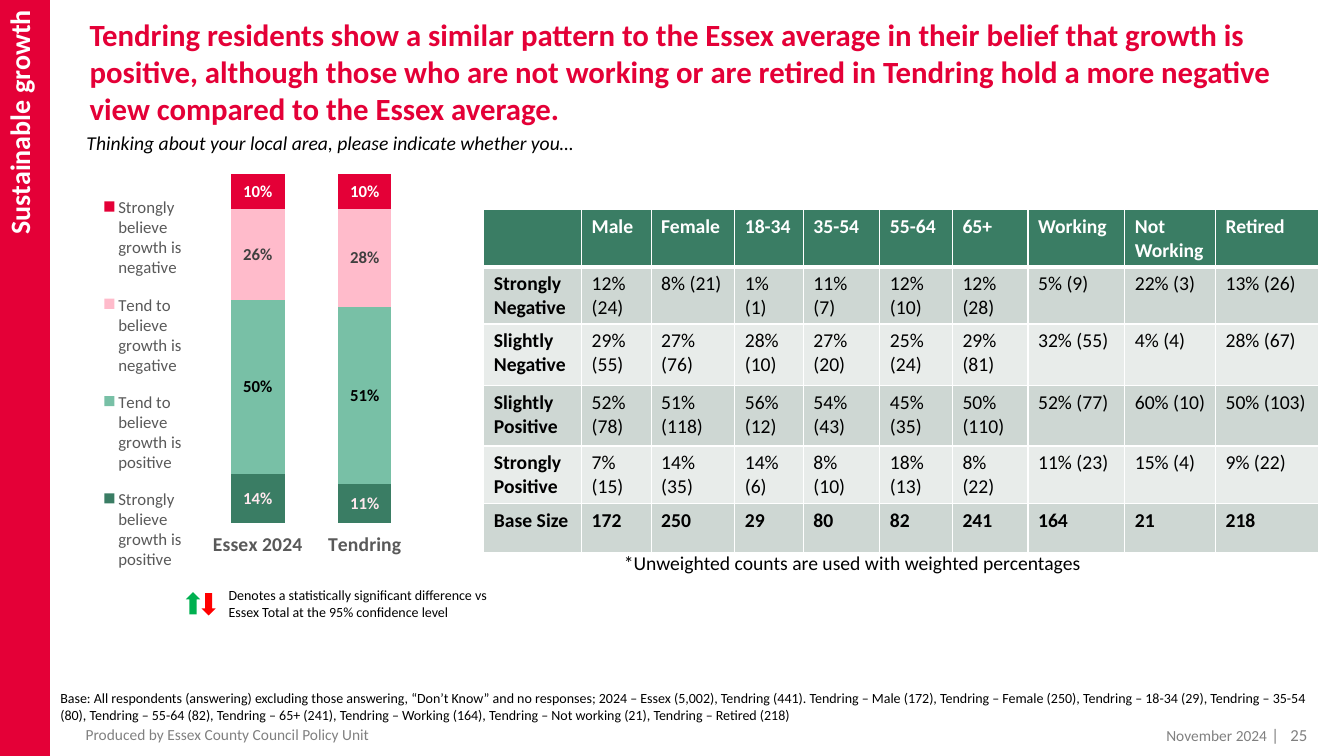
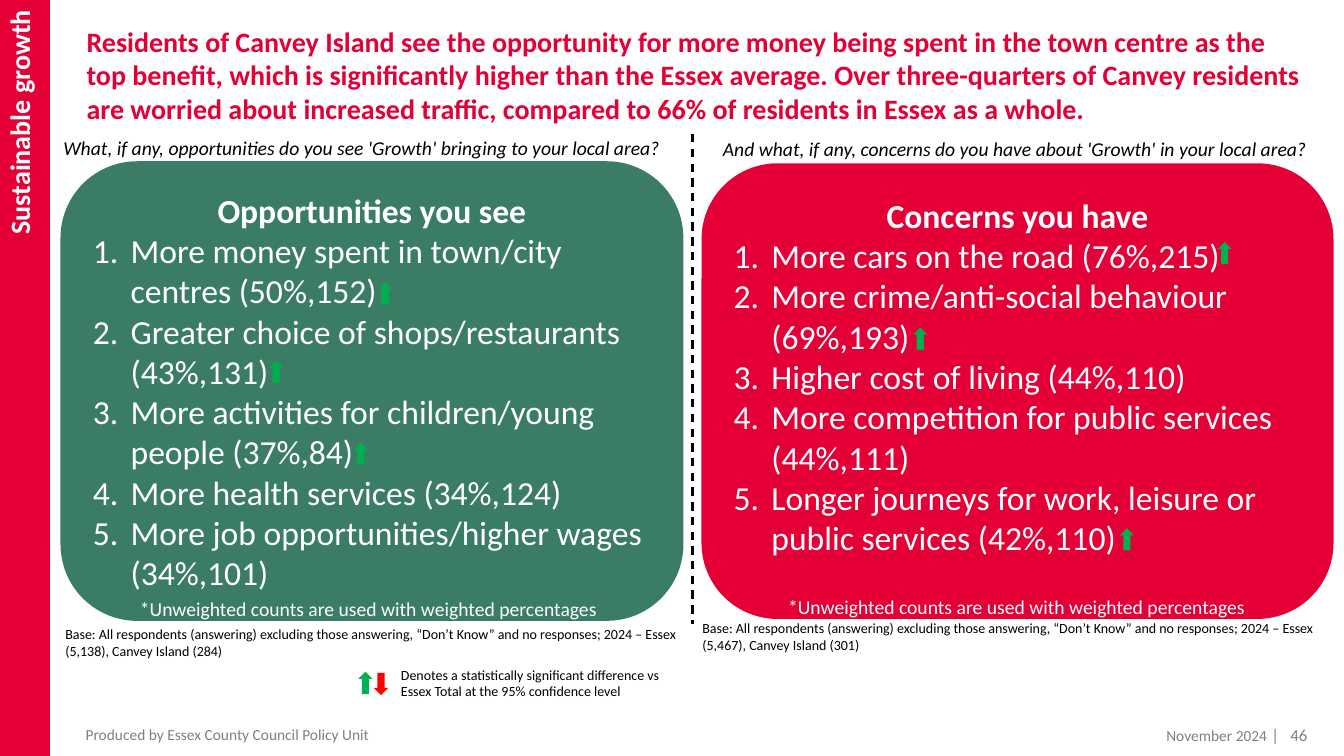
from dataclasses import dataclass

from lxml import etree
from pptx import Presentation, util as u
from pptx.chart.data import CategoryChartData
from pptx.dml.color import RGBColor
from pptx.enum import chart as ch, dml, shapes, text
from pptx.oxml.ns import qn

COLS, ROWS = 80, 45
CELL = u.Inches(7.5) / ROWS  # square grid cell
FONT = "Calibri"
HEX = dict(red="E40037", green="3A7D64", mint="78C0A6", pink="FFBBCB", blush="FFE8EE",
           white="FFFFFF", black="000000", grey="808080", slate="595959", charcoal="404040",
           sage="CED7D3", mist="E8ECEA", up="00B050", down="FF0000")
INSETS = (0.6, 0.3, 0.6, 0.3)  # left, top, right, bottom
TITLE_INSETS = (0.6, 0.3, 0.6, 0)
LEFT, CENTER, RIGHT = text.PP_ALIGN.LEFT, text.PP_ALIGN.CENTER, text.PP_ALIGN.RIGHT
TOP, MIDDLE = text.MSO_ANCHOR.TOP, text.MSO_ANCHOR.MIDDLE
COUNTS_NOTE = "*Unweighted counts are used with weighted percentages"
BASE = "Base: All respondents (answering) excluding those answering, “Don’t Know” and no responses; 2024 – "


@dataclass(frozen=True)
class Box:
    """A place on the grid, in columns and rows."""
    col: float
    row: float
    cols: float
    rows: float

    def emu(self) -> list[int]:
        return [g(v) for v in (self.col, self.row, self.cols, self.rows)]


@dataclass(frozen=True)
class Style:
    size: float
    color: str = "black"
    bold: bool = False
    italic: bool = False
    align: text.PP_ALIGN = LEFT


@dataclass(frozen=True)
class Series:
    name: str
    values: tuple[float, ...]
    color: str
    label: str


@dataclass(frozen=True)
class Panel:
    box: Box
    color: str
    heading: str
    items: tuple[str, ...]
    question: str
    question_at: tuple[float, float]
    base: str
    base_at: tuple[float, float]
    note_at: tuple[float, float]
    arrows: tuple[tuple[float, float], ...]
    bottom_inset: float = 0.3


QUESTION = Style(14, italic=True)
NOTE = Style(14)
SMALL = Style(10)
FOOTER = Style(11, "grey")
SERIES = (
    Series("Strongly believe growth is positive", (0.14, 0.11), "green", "blush"),
    Series("Tend to believe growth is positive", (0.50, 0.51), "mint", "black"),
    Series("Tend to believe growth is negative", (0.26, 0.28), "pink", "charcoal"),
    Series("Strongly believe growth is negative", (0.10, 0.10), "red", "white"),
)
TABLE = (
    ("", "Male", "Female", "18-34", "35-54", "55-64", "65+", "Working", "Not Working", "Retired"),
    ("Strongly Negative", "12% (24)", "8% (21)", "1% (1)", "11% (7)", "12% (10)", "12% (28)",
     "5% (9)", "22% (3)", "13% (26)"),
    ("Slightly Negative", "29% (55)", "27% (76)", "28% (10)", "27% (20)", "25% (24)", "29% (81)",
     "32% (55)", "4% (4)", "28% (67)"),
    ("Slightly Positive", "52% (78)", "51% (118)", "56% (12)", "54% (43)", "45% (35)", "50% (110)",
     "52% (77)", "60% (10)", "50% (103)"),
    ("Strongly Positive", "7% (15)", "14% (35)", "14% (6)", "8% (10)", "18% (13)", "8% (22)",
     "11% (23)", "15% (4)", "9% (22)"),
    ("Base Size", "172", "250", "29", "80", "82", "241", "164", "21", "218"),
)
TABLE_COLS = (5.82, 4.14, 4.98, 4.08, 4.56, 4.32, 4.5, 5.76, 5.4, 6.12)
TABLE_ROWS = (2.7, 3.3, 3.66, 3.6, 3.42, 2.94)
PANELS = (
    Panel(Box(41.76, 9.72, 37.62, 27.12), "red", "Concerns you have",
          ("More cars on the road (76%,215)", "More crime/anti-social behaviour (69%,193)",
           "Higher cost of living (44%,110)", "More competition for public services (44%,111)",
           "Longer journeys for work, leisure or public services (42%,110)"),
          "And what, if any, concerns do you have about 'Growth' in your local area?", (42.44, 7.86),
          "Essex (5,467), Canvey Island (301)", (41.22, 36.6), (46.32, 35.1),
          ((54.36, 19.5), (66.66, 31.44), (72.48, 14.4)), bottom_inset=2.1),
    Panel(Box(3.6, 9.6, 37.08, 27.36), "green", "Opportunities you see",
          ("More money spent in town/city centres (50%,152)",
           "Greater choice of shops/restaurants (43%,131)",
           "More activities for children/young people (37%,84)", "More health services (34%,124)",
           "More job opportunities/higher wages (34%,101)"),
          "What, if any, opportunities do you see 'Growth' bringing to your local area?", (3.18, 7.8),
          "Essex (5,138), Canvey Island (284)", (3.3, 36.96), (7.74, 35.22),
          ((22.5, 16.8), (16.02, 21.48), (21.06, 26.34))),
)


def g(cells: float) -> int:
    return round(cells * CELL)


def rgb(name: str) -> RGBColor:
    return RGBColor.from_string(HEX[name])


def set_font(font, st: Style) -> None:
    font.name, font.size = FONT, u.Pt(st.size)
    font.bold, font.italic = st.bold, st.italic
    font.color.rgb = rgb(st.color)


def write(p, words: str, st: Style) -> None:
    p.text, p.alignment = words, st.align
    set_font(p.font, st)


def set_frame(tf, insets=INSETS, anchor=TOP) -> None:
    tf.word_wrap, tf.vertical_anchor = True, anchor
    tf.margin_left, tf.margin_top, tf.margin_right, tf.margin_bottom = map(g, insets)


def add_text(s, box: Box, words: str, st: Style, insets=INSETS, anchor=TOP) -> None:
    tf = s.shapes.add_textbox(*box.emu()).text_frame
    set_frame(tf, insets, anchor)
    write(tf.paragraphs[0], words, st)


def add_filled(s, kind, box: Box, color: str):
    sp = s.shapes.add_shape(kind, *box.emu())
    sp.shadow.inherit = False
    sp.fill.solid()
    sp.fill.fore_color.rgb = rgb(color)
    sp.line.fill.background()
    return sp


def add_arrow(s, col: float, row: float, up: bool = True) -> None:
    kind = shapes.MSO_SHAPE.UP_ARROW if up else shapes.MSO_SHAPE.DOWN_ARROW
    add_filled(s, kind, Box(col, row, 0.84, 1.32), "up" if up else "down")


def add_key(s, col: float, row: float) -> None:
    """Explains the significance arrows."""
    add_text(s, Box(col, row, 18.24, 2.64),
             "Denotes a statistically significant difference vs Essex Total at the 95% confidence level", SMALL)
    add_arrow(s, col - 1.95, row + 0.63)
    add_arrow(s, col - 1.02, row + 0.69, up=False)


def add_page(prs, number: int, title: str, title_box: Box, title_size: float):
    """Adds a slide with its title, side band and footer."""
    s = prs.slides.add_slide(prs.slide_layouts[6])
    add_text(s, title_box, title, Style(title_size, "red", bold=True), TITLE_INSETS)
    band = add_filled(s, shapes.MSO_SHAPE.RECTANGLE, Box(0, 0, 2.94, ROWS), "red")
    band.line.color.rgb, band.line.width = rgb("red"), u.Pt(1)
    tf = band.text_frame
    set_frame(tf, (0.6, 0.6, 0.98, 0.3), MIDDLE)
    tf._txBody.bodyPr.set("vert", "vert270")
    write(tf.paragraphs[0], "Sustainable growth", Style(20, "white", bold=True, align=RIGHT))
    add_text(s, Box(4.56, 43.26, 39.24, 0.9), "Produced by Essex County Council Policy Unit", FOOTER,
             (0.54, 0.3, 0.6, 0.3), MIDDLE)
    page = s.shapes.add_textbox(*Box(72.72, 43.26, 5.1, 0.9).emu()).text_frame
    set_frame(page, (0.6, 0.3, 0, 0.3), MIDDLE)
    write(page.paragraphs[0], f"|   {number}", Style(12, "grey", align=RIGHT))
    add_text(s, Box(61.62, 42.9, 14.4, 0.9), "November 2024", Style(11, "grey", align=RIGHT))
    return s


def set_layout(part, x: float, y: float, w: float, h: float, inner: bool = False) -> None:
    """Places a plot area or legend by shares of the chart."""
    for old in part.findall(qn("c:layout")):
        part.remove(old)
    layout = etree.Element(qn("c:layout"))
    manual = etree.SubElement(layout, qn("c:manualLayout"))
    values = [("layoutTarget", "inner")] if inner else []
    values += [("xMode", "edge"), ("yMode", "edge"), ("x", x), ("y", y), ("w", w), ("h", h)]
    for tag, val in values:
        etree.SubElement(manual, qn(f"c:{tag}")).set("val", str(val))
    before = part.find(qn("c:legendPos"))
    part.insert(0 if before is None else part.index(before) + 1, layout)


def add_growth_chart(s, box: Box) -> None:
    data = CategoryChartData(number_format="0%")
    data.categories = ["Essex 2024", "Tendring"]
    for item in SERIES:
        data.add_series(item.name, item.values)
    chart = s.shapes.add_chart(ch.XL_CHART_TYPE.COLUMN_STACKED, *box.emu(), data).chart
    set_font(chart.font, SMALL)
    chart.has_title = False
    chart.has_legend = True
    chart.legend.position = ch.XL_LEGEND_POSITION.LEFT
    chart.legend.include_in_layout = False
    set_font(chart.legend.font, Style(12, "slate"))
    value, category = chart.value_axis, chart.category_axis
    value.minimum_scale, value.maximum_scale = 0, 1.01
    value.has_major_gridlines = value.visible = False
    category.format.line.fill.background()
    set_font(category.tick_labels.font, Style(14, "slate", bold=True))
    plot = chart.plots[0]
    plot.gap_width, plot.overlap, plot.vary_by_categories = 100, 100, False
    for ser, item in zip(plot.series, SERIES):
        ser.format.fill.solid()
        ser.format.fill.fore_color.rgb = rgb(item.color)
        labels = ser.data_labels
        labels.show_value, labels.number_format = True, "0%"
        labels.number_format_is_linked = False
        set_font(labels.font, Style(12, item.label, bold=True))
    set_layout(chart._chartSpace.chart.plotArea, 0.32, 0.07, 0.54, 0.71, inner=True)
    set_layout(chart.legend._element, 0.04, 0.09, 0.25, 0.82)


def set_borders(cell, bottom: float) -> None:
    tc_pr = cell._tc.get_or_add_tcPr()
    for i, (side, pt) in enumerate((("L", 1), ("R", 1), ("T", 1), ("B", bottom))):
        ln = etree.Element(qn(f"a:ln{side}"), w=str(u.Pt(pt)))
        fill = etree.SubElement(ln, qn("a:solidFill"))
        etree.SubElement(fill, qn("a:srgbClr"), val=HEX["white"])
        tc_pr.insert(i, ln)


def add_results_table(s, col: float, row: float) -> None:
    box = Box(col, row, sum(TABLE_COLS), sum(TABLE_ROWS))
    table = s.shapes.add_table(len(TABLE_ROWS), len(TABLE_COLS), *box.emu()).table
    for column, width in zip(table.columns, TABLE_COLS):
        column.width = g(width)
    last = len(TABLE) - 1
    for r, line in enumerate(TABLE):
        table.rows[r].height = g(TABLE_ROWS[r])
        fill = "green" if r == 0 else "sage" if r % 2 else "mist"
        for c, words in enumerate(line):
            cell = table.cell(r, c)
            cell.fill.solid()
            cell.fill.fore_color.rgb = rgb(fill)
            set_borders(cell, 1 if r else 3)
            write(cell.text_frame.paragraphs[0], words,
                  Style(14, "black" if r else "white", bold=r in (0, last) or c == 0))


def add_panel(s, panel: Panel) -> None:
    """Adds a rounded panel with its numbered list, question, base and arrows."""
    tf = add_filled(s, shapes.MSO_SHAPE.ROUNDED_RECTANGLE, panel.box, panel.color).text_frame
    set_frame(tf, (0.6, 0.3, 0.6, panel.bottom_inset), MIDDLE)
    write(tf.paragraphs[0], panel.heading, Style(24, "white", bold=True, align=CENTER))
    for item in panel.items:
        p = tf.add_paragraph()
        p_pr = p._p.get_or_add_pPr()
        p_pr.set("marL", str(g(2.25)))
        p_pr.set("indent", str(-g(2.25)))
        etree.SubElement(p_pr, qn("a:buFont"), typeface="+mj-lt")
        etree.SubElement(p_pr, qn("a:buAutoNum"), type="arabicPeriod")
        write(p, item, Style(24, "white"))
    add_text(s, Box(*panel.question_at, 39.24, 2.04), panel.question, QUESTION)
    add_text(s, Box(*panel.base_at, 38.1, 2.64), BASE + panel.base, SMALL)
    add_text(s, Box(*panel.note_at, 39.24, 2.04), COUNTS_NOTE, Style(14, "white"))
    for at in panel.arrows:
        add_arrow(s, *at)


def add_divider(s, col: float, top: float, bottom: float) -> None:
    cx = s.shapes.add_connector(shapes.MSO_CONNECTOR.STRAIGHT, g(col), g(top), g(col), g(bottom))
    cx.line.color.rgb, cx.line.width = rgb("black"), u.Pt(1.5)
    cx.line.dash_style = dml.MSO_LINE.DASH
    etree.SubElement(cx._element.spPr, qn("a:effectLst"))


def build_growth_slide(prs) -> None:
    s = add_page(prs, 25, "Tendring residents show a similar pattern to the Essex average in their belief that "
                 "growth is positive, although those who are not working or are retired in Tendring hold a "
                 "more negative view compared to the Essex average.", Box(4.74, 0.66, 73.5, 6.9), 22)
    add_text(s, Box(4.56, 7.5, 39.24, 2.04),
             "Thinking about your local area, please indicate whether you…", QUESTION)
    add_growth_chart(s, Box(4.62, 8.1, 23.58, 29.52))
    add_text(s, Box(3, 40.74, 76.26, 2.64), BASE + "Essex (5,002), Tendring (441). Tendring – Male (172), "
             "Tendring – Female (250), Tendring – 18-34 (29), Tendring – 35-54 (80), Tendring – 55-64 (82), "
             "Tendring – 65+ (241), Tendring – Working (164), Tendring – Not working (21), "
             "Tendring – Retired (218)", SMALL)
    add_key(s, 13.02, 34.62)
    add_results_table(s, 28.8, 12.48)
    add_text(s, Box(36.54, 32.52, 39.24, 2.04), COUNTS_NOTE, NOTE)


def build_canvey_slide(prs) -> None:
    s = add_page(prs, 46, "Residents of Canvey Island see the opportunity for more money being spent in the town "
                 "centre as the top benefit, which is significantly higher than the Essex average. Over "
                 "three-quarters of Canvey residents are worried about increased traffic, compared to 66% of "
                 "residents in Essex as a whole.", Box(4.56, 1.14, 73.5, 5.04), 20)
    for panel in PANELS:
        add_panel(s, panel)
    add_key(s, 23.28, 39.36)
    add_divider(s, 41.22, 7.98, 37.14)


def main() -> None:
    prs = Presentation()
    prs.slide_width, prs.slide_height = g(COLS), g(ROWS)
    build_growth_slide(prs)
    build_canvey_slide(prs)
    prs.save("out.pptx")


if __name__ == "__main__":
    main()
